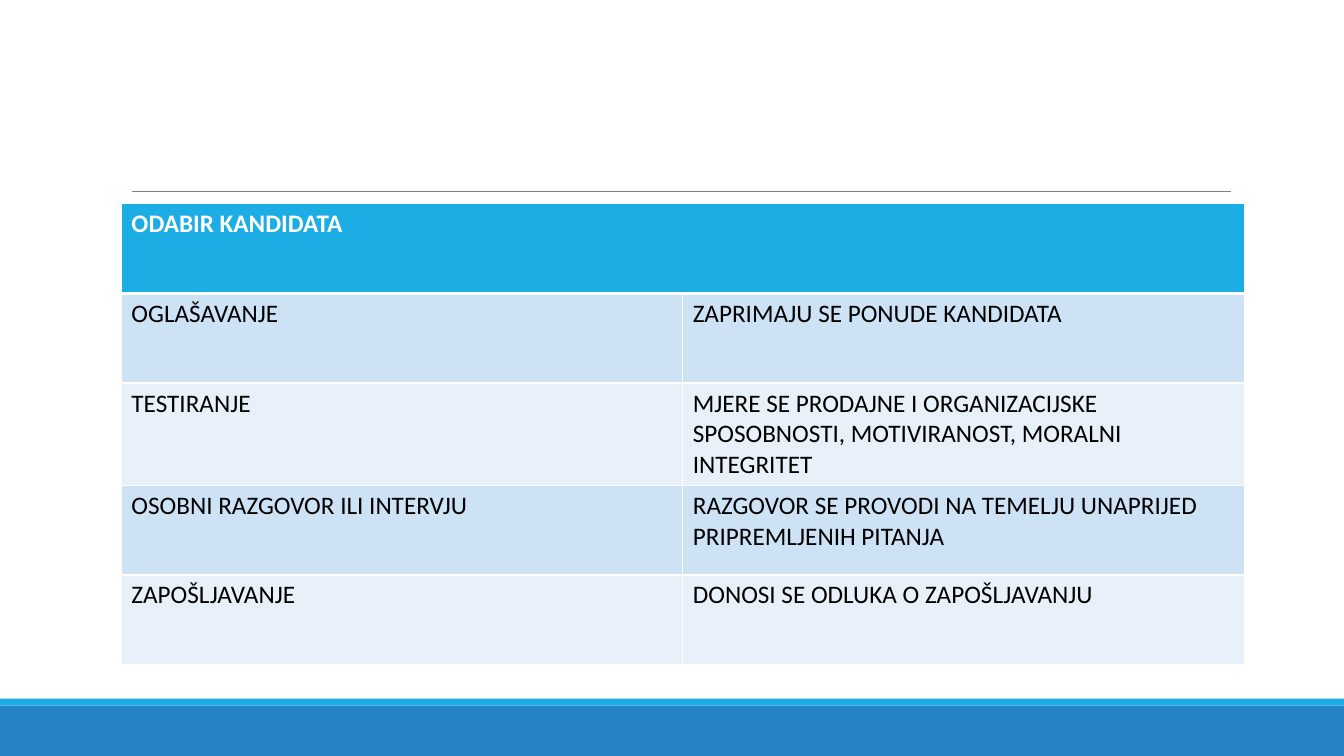
from lxml.etree import SubElement
from pptx import Presentation
from pptx.dml.color import RGBColor
from pptx.enum.shapes import MSO_CONNECTOR, MSO_SHAPE
from pptx.oxml.ns import qn
from pptx.util import Pt

WHITE = RGBColor(0xFF, 0xFF, 0xFF)
BLACK = RGBColor(0x00, 0x00, 0x00)
GRAY = RGBColor(0x80, 0x80, 0x80)
CYAN = RGBColor(0x1C, 0xAD, 0xE4)
BLUE = RGBColor(0x26, 0x83, 0xC6)
BAND_DARK = RGBColor(0xCD, 0xE3, 0xF5)
BAND_LIGHT = RGBColor(0xE8, 0xF1, 0xFA)

SLIDE_WIDTH, SLIDE_HEIGHT = 960, 540
HEADING = "ODABIR KANDIDATA"
STAGES = [
    ("OGLAŠAVANJE", "ZAPRIMAJU SE PONUDE KANDIDATA"),
    ("TESTIRANJE", "MJERE SE PRODAJNE I ORGANIZACIJSKE SPOSOBNOSTI, "
                   "MOTIVIRANOST, MORALNI INTEGRITET"),
    ("OSOBNI RAZGOVOR ILI INTERVJU",
     "RAZGOVOR SE PROVODI NA TEMELJU UNAPRIJED PRIPREMLJENIH PITANJA"),
    ("ZAPOŠLJAVANJE", "DONOSI SE ODLUKA O ZAPOŠLJAVANJU"),
]


def add_band(slide, left, top, width, height, color):
    band = slide.shapes.add_shape(
        MSO_SHAPE.RECTANGLE, Pt(left), Pt(top), Pt(width), Pt(height))
    band.shadow.inherit = False
    band.fill.solid()
    band.fill.fore_color.rgb = color
    band.line.fill.background()


def add_footer(slide, left, top, width, height):
    stripe = 5
    add_band(slide, left, top + stripe, width, height - stripe, BLUE)
    add_band(slide, left, top, width, stripe, CYAN)


def add_title_rule(slide, left, top, width):
    rule = slide.shapes.add_connector(
        MSO_CONNECTOR.STRAIGHT, Pt(left), Pt(top), Pt(left + width), Pt(top))
    rule.line.color.rgb = GRAY
    rule.line.width = Pt(0.5)
    SubElement(rule._element.spPr, qn("a:effectLst"))


def set_borders(cell, top=1, bottom=1):
    properties = cell._tc.get_or_add_tcPr()
    for side, weight in (("L", 1), ("R", 1), ("T", top), ("B", bottom)):
        border = SubElement(properties, qn(f"a:ln{side}"), w=str(Pt(weight)))
        fill = SubElement(border, qn("a:solidFill"))
        SubElement(fill, qn("a:srgbClr"), val=str(WHITE))


def write_cell(cell, text, fill, color, bold=False):
    cell.fill.solid()
    cell.fill.fore_color.rgb = fill
    run = cell.text_frame.paragraphs[0].add_run()
    run.text = text
    run.font.name = "Calibri"
    run.font.size = Pt(18)
    run.font.bold = bold
    run.font.color.rgb = color


def add_selection_table(slide, left, top, width, height):
    table = slide.shapes.add_table(
        len(STAGES) + 1, 2, Pt(left), Pt(top), Pt(width), Pt(height)).table
    for column in table.columns:
        column.width = Pt(width / 2)
    for cell in table.rows[0].cells:
        set_borders(cell, bottom=3)
    table.cell(0, 0).merge(table.cell(0, 1))
    write_cell(table.cell(0, 0), HEADING, CYAN, WHITE, bold=True)
    for row, stage in enumerate(STAGES, start=1):
        fill = BAND_DARK if row % 2 else BAND_LIGHT
        for column, text in enumerate(stage):
            cell = table.cell(row, column)
            set_borders(cell, top=3 if row == 1 else 1)
            write_cell(cell, text, fill, BLACK)


def main():
    deck = Presentation()
    deck.slide_width, deck.slide_height = Pt(SLIDE_WIDTH), Pt(SLIDE_HEIGHT)
    slide = deck.slides.add_slide(deck.slide_layouts[6])
    add_footer(slide, 0, 499, SLIDE_WIDTH, SLIDE_HEIGHT - 499)
    add_title_rule(slide, 94.3, 136.8, 784.8)
    add_selection_table(slide, 86.7, 145.6, 802, 320)
    deck.save("out.pptx")


if __name__ == "__main__":
    main()
